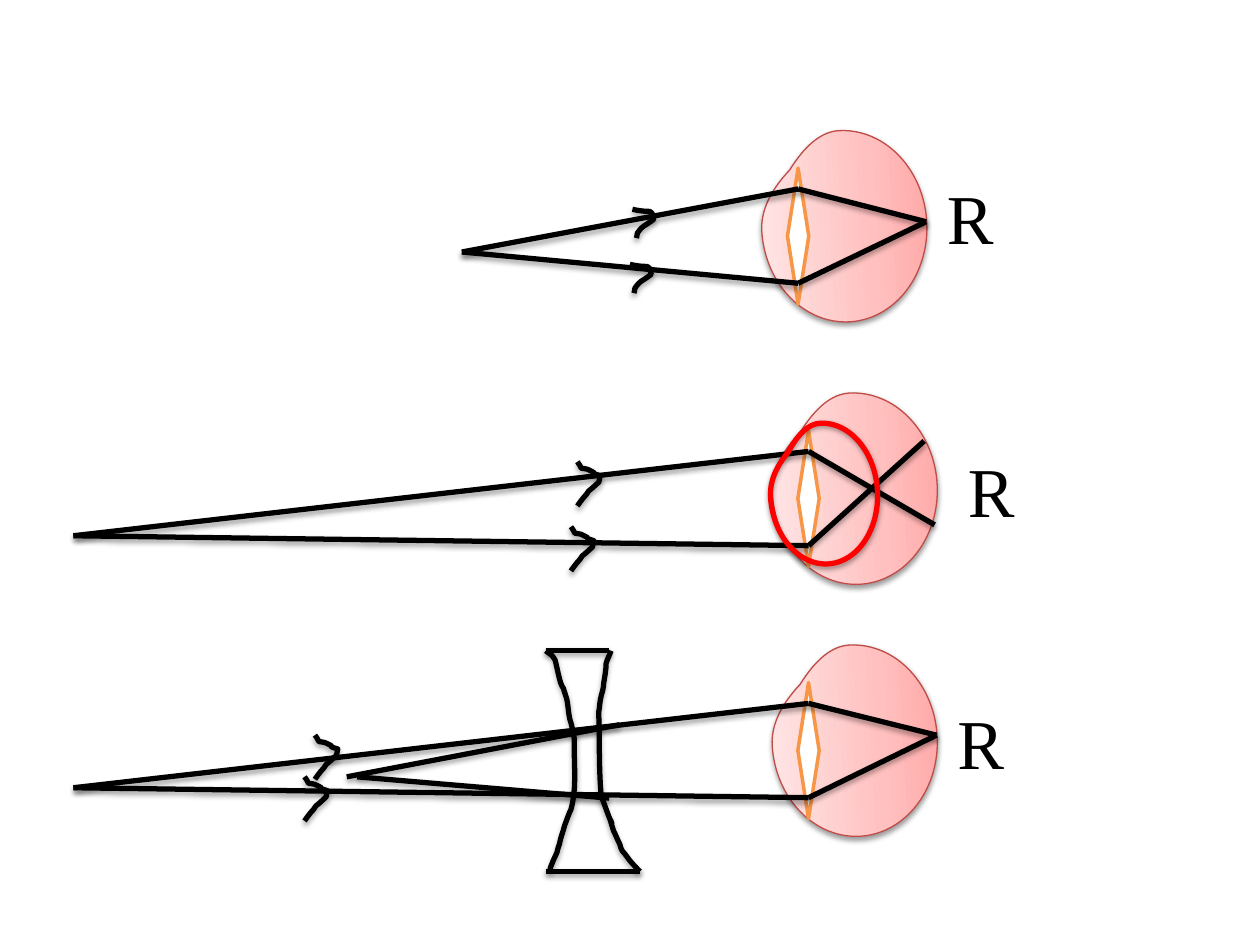
"""Draw three eyes: normal focus, short sight, and its correction by a concave lens."""
import copy

import lxml.etree
import pptx
import pptx.dml.color
import pptx.enum.shapes
import pptx.enum.text
import pptx.oxml
import pptx.oxml.ns
import pptx.util

Cm, Pt = pptx.util.Cm, pptx.util.Pt
RGBColor = pptx.dml.color.RGBColor
SHAPE = pptx.enum.shapes.MSO_SHAPE
qn = pptx.oxml.ns.qn

BLACK = RGBColor(0x00, 0x00, 0x00)
WHITE = RGBColor(0xFF, 0xFF, 0xFF)
RED = RGBColor(0xFF, 0x00, 0x00)
ORANGE = RGBColor(0xF7, 0x96, 0x46)
EYE_OUTLINE = RGBColor(0xBF, 0x4C, 0x48)
EYE_STOPS = [
    (0, RGBColor(0xFF, 0xA6, 0xA5)),
    (0.35, RGBColor(0xFF, 0xC0, 0xBF)),
    (1, RGBColor(0xFF, 0xE7, 0xE7)),
]

EYES = [
    {"lens": (16.09, 4.76), "source": (9.31, 5.08),
     "retina": [(18.67, 4.47), (18.67, 4.47)], "label": (18.84, 3.39)},
    {"lens": (16.3, 10.05), "source": (1.48, 10.8),
     "retina": [(18.84, 10.58), (18.63, 8.89)], "label": (19.26, 8.89)},
    {"lens": (16.3, 15.13), "source": (1.48, 15.88),
     "retina": [(18.88, 14.82), (18.88, 14.82)], "label": (19.05, 13.97)},
]
RETINA_LABEL = "R"
EYE_SIZE, EYE_OFFSET = (3.86, 3.33), (0.93, -0.2)
LENS_SIZE, RAY_OFFSETS = (0.43, 2.74), (-0.95, 0.95)
RING_CENTER, RING_SIZE = (16.61, 9.95), (2.84, 2.16)

VIRTUAL_RAYS = [((6.99, 15.66), (12.49, 14.61)), ((7.2, 15.66), (12.28, 16.09))]
CONCAVE_TOP = ((11, 13.12), (12.28, 13.12))

CONCAVE_LEFT = [
    (.25, .18, .15, .08, .3, .64), (.33, .69, .33, .74, .36, .76),
    (.38, .84, .41, .91, .43, .99), (.46, 1.14, .46, 1.32, .51, 1.45),
    (.56, 1.65, .53, 1.55, .58, 1.78), (.56, 2.24, .64, 2.74, .51, 3.2),
    (.46, 3.3, .43, 3.4, .38, 3.53), (.36, 3.63, .3, 3.76, .28, 3.89),
    (.25, 3.94, .25, 4.01, .23, 4.06), (.2, 4.14, .15, 4.22, .13, 4.29),
    (.1, 4.34, .08, 4.45, .08, 4.45),
]
CONCAVE_RIGHT = [
    (-.03, .08, -.08, .18, -.1, .25), (-.1, .38, -.13, .53, -.15, .66),
    (-.15, .74, -.18, .84, -.2, .91), (-.23, 1.02, -.23, 1.14, -.25, 1.24),
    (-.23, 1.8, -.25, 2.36, -.2, 2.92), (-.2, 2.92, -.08, 3.25, -.05, 3.33),
    (.13, 3.78, -.13, 3.07, .05, 3.63), (.1, 3.73, .13, 3.81, .18, 3.91),
    (.18, 3.94, .2, 3.99, .23, 4.04), (.3, 4.11, .36, 4.22, .43, 4.29),
    (.58, 4.45),
]
CONCAVE_BOTTOM = [(1.91, 0)]
SMALL_ARROW = [
    (.43, .1, .36, -.05, .43, .2), (.2, .38, .23, .3, .1, .48),
    (.1, .53, .08, .56, .08, .58),
]
LARGE_ARROW = [
    (.03, .03, .05, .08, .08, .13), (.13, .15, .18, .13, .2, .15),
    (.53, .3, .15, .18, .46, .28), (.43, .33, .46, .41, .41, .43),
    (.38, .48, .33, .48, .3, .53), (.25, .56, .2, .61, .18, .66),
    (.1, .74, 0, .89, 0, .89),
]
STROKES = [
    (CONCAVE_LEFT, [(11, 13.12)]),
    (CONCAVE_RIGHT, [(12.32, 13.12)]),
    (CONCAVE_BOTTOM, [(11, 17.57)]),
    (SMALL_ARROW, [(12.75, 4.22), (12.7, 5.33)]),
    (LARGE_ARROW, [(11.51, 10.62), (6.35, 14.82), (11.64, 9.31), (6.14, 15.66)]),
]


def set_line(shape, color, width):
    shape.line.color.rgb = color
    shape.line.width = Pt(width)


def add_shadow(shape, alpha=35, distance=1.8):
    properties = shape._element.spPr
    properties.append(pptx.oxml.parse_xml(
        f'<a:effectLst {pptx.oxml.ns.nsdecls("a")}>'
        f'<a:outerShdw blurRad="{Pt(3.1)}" dist="{Pt(distance)}" dir="5400000" rotWithShape="0">'
        f'<a:srgbClr val="{BLACK}"><a:alpha val="{alpha * 1000}"/></a:srgbClr>'
        '</a:outerShdw></a:effectLst>'))


def add_centered(slide, preset, center, size):
    left, top = (middle - length / 2 for middle, length in zip(center, size))
    return slide.shapes.add_shape(preset, Cm(left), Cm(top), *map(Cm, size))


def add_teardrop(slide, center, size, color, width):
    teardrop = add_centered(slide, SHAPE.TEAR, center, size)
    teardrop.adjustments[0] = 0.62
    teardrop.rotation = 266.7
    set_line(teardrop, color, width)
    add_shadow(teardrop, 38, 1.6)
    return teardrop


def add_eye(slide, center):
    eye = add_teardrop(slide, center, EYE_SIZE, EYE_OUTLINE, 0.75)
    eye.fill.gradient()
    eye.fill.gradient_angle = 90
    stop_list = eye._element.spPr.find(".//" + qn("a:gsLst"))
    stop_list.append(copy.deepcopy(stop_list[0]))
    for stop, (position, color) in zip(eye.fill.gradient_stops, EYE_STOPS):
        stop.position = position
        stop.color.rgb = color


def add_ray(slide, start, end):
    ray = slide.shapes.add_connector(
        pptx.enum.shapes.MSO_CONNECTOR.STRAIGHT, *map(Cm, start + end))
    set_line(ray, BLACK, 3)
    add_shadow(ray)


def bend_segments(stroke, segments):
    lines = iter(stroke._element.findall(".//" + qn("a:lnTo")))
    for segment in segments:
        first, *others = [next(lines) for _ in range(len(segment) // 2)]
        if others:
            curve = lxml.etree.Element(qn("a:cubicBezTo"))
            first.addprevious(curve)
            for line in (first, *others):
                curve.append(line[0])
                line.getparent().remove(line)


def add_stroke(slide, segments, origin):
    left, top = origin
    builder = slide.shapes.build_freeform(Cm(left), Cm(top))
    builder.add_line_segments(
        [(Cm(left + x), Cm(top + y))
         for segment in segments for x, y in zip(segment[::2], segment[1::2])],
        close=False)
    stroke = builder.convert_to_shape()
    bend_segments(stroke, segments)
    stroke.fill.background()
    set_line(stroke, BLACK, 3)
    add_shadow(stroke)


def add_label(slide, position):
    label = slide.shapes.add_textbox(*map(Cm, position), Cm(1.47), Cm(1.96))
    frame = label.text_frame
    frame.text = RETINA_LABEL
    frame.word_wrap = False
    frame.auto_size = pptx.enum.text.MSO_AUTO_SIZE.SHAPE_TO_FIT_TEXT
    font = frame.paragraphs[0].runs[0].font
    font.name, font.size = "Times New Roman", Pt(40)
    font.color.rgb = BLACK


def add_eye_diagram(slide, diagram):
    x, y = diagram["lens"]
    add_eye(slide, (x + EYE_OFFSET[0], y + EYE_OFFSET[1]))
    lens = add_centered(slide, SHAPE.FLOWCHART_DECISION, (x, y), LENS_SIZE)
    lens.shadow.inherit = False
    lens.fill.solid()
    lens.fill.fore_color.rgb = WHITE
    set_line(lens, ORANGE, 2)
    crossings = [(x, y + offset) for offset in RAY_OFFSETS]
    for crossing in crossings:
        add_ray(slide, diagram["source"], crossing)
    for crossing, retina in zip(crossings, diagram["retina"]):
        add_ray(slide, crossing, retina)


def main():
    presentation = pptx.Presentation()
    presentation.slide_width, presentation.slide_height = Cm(25.4), Cm(19.05)
    slide = presentation.slides.add_slide(presentation.slide_layouts[6])
    for diagram in EYES:
        add_eye_diagram(slide, diagram)
    for start, end in [CONCAVE_TOP] + VIRTUAL_RAYS:
        add_ray(slide, start, end)
    for segments, origins in STROKES:
        for origin in origins:
            add_stroke(slide, segments, origin)
    for diagram in EYES:
        add_label(slide, diagram["label"])
    ring = add_teardrop(slide, RING_CENTER, RING_SIZE, RED, 3)
    ring.fill.background()
    presentation.save("out.pptx")


if __name__ == "__main__":
    main()
